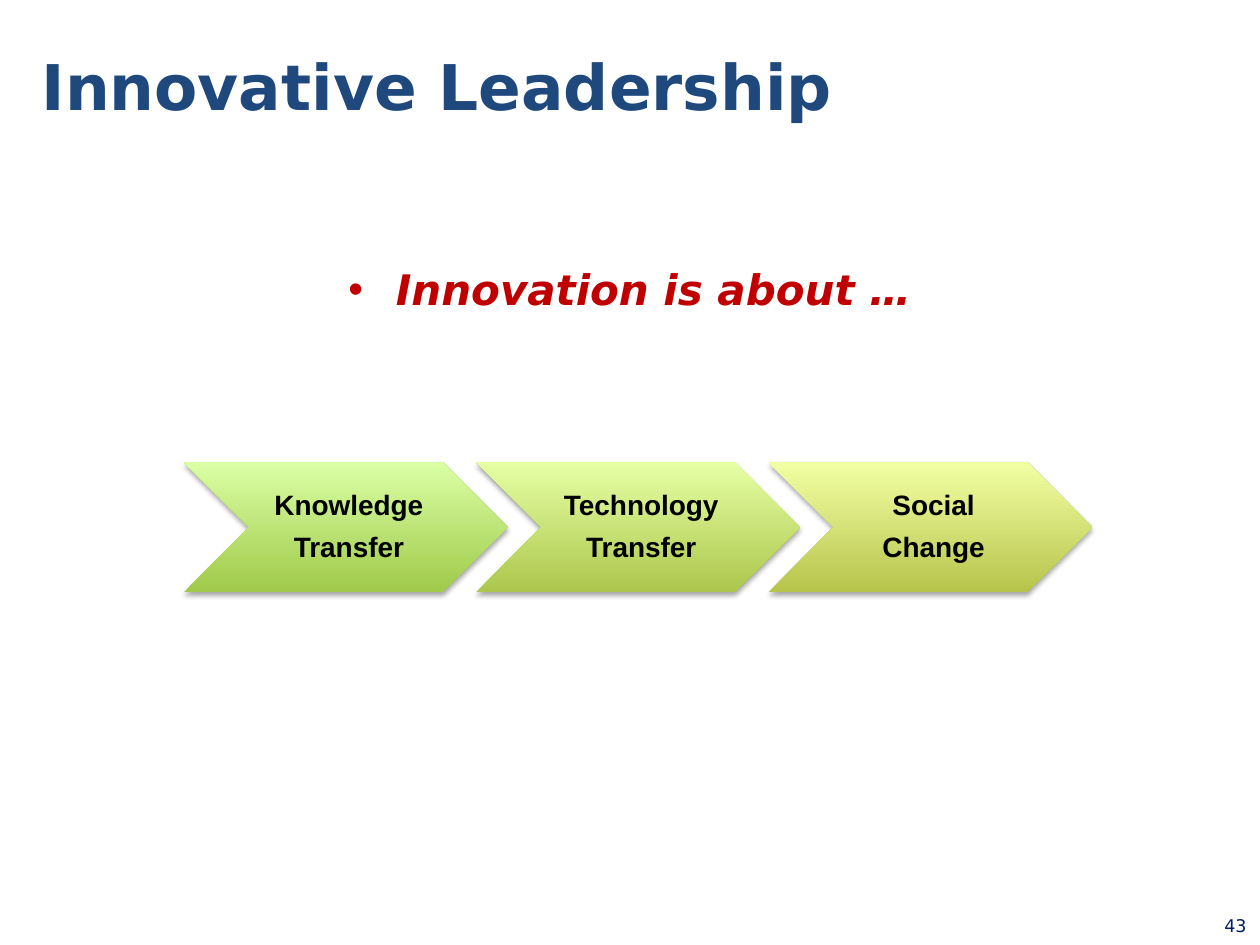
from lxml import etree
from pptx import Presentation
from pptx.dml.color import RGBColor
from pptx.enum.shapes import MSO_SHAPE
from pptx.enum.text import MSO_ANCHOR, MSO_AUTO_SIZE, PP_ALIGN
from pptx.oxml.ns import qn
from pptx.util import Inches, Pt

CHEVRON = MSO_SHAPE.CHEVRON
MIDDLE, TOP = MSO_ANCHOR.MIDDLE, MSO_ANCHOR.TOP
NO_AUTOFIT = MSO_AUTO_SIZE.NONE
LEFT, CENTER = PP_ALIGN.LEFT, PP_ALIGN.CENTER

SANS, LABEL_FONT = "DejaVu Sans", "Arial"
COLORS = {
    "title": "1F497D", "lead": "C00000", "number": "002060",
    "label": "000000", "shadow": "000000",
}

# Row of chevrons: first left edge, top, size and step, in inches
ROW_LEFT, ROW_TOP = 1.46, 3.67
CHEVRON_WIDTH, CHEVRON_HEIGHT, STEP = 2.57, 1.03, 2.32
# Label lines, then the gradient from bottom to top
STAGES = [
    (("Knowledge", "Transfer"), ("A0CA4A", "DAFFA5")),
    (("Technology", "Transfer"), ("ACC74C", "E6FFA5")),
    (("Social", "Change"), ("B7C44C", "F2FFA3")),
]


def place(shape, left, top, width, height):
    shape.left, shape.top = Inches(left), Inches(top)
    shape.width, shape.height = Inches(width), Inches(height)


def set_margins(frame, left, top, right, bottom):
    frame.margin_left, frame.margin_top = Inches(left), Inches(top)
    frame.margin_right, frame.margin_bottom = Inches(right), Inches(bottom)


def write(frame, lines, font, size, color, align=CENTER, anchor=MIDDLE,
          bold=False, italic=False):
    """Fill a text frame with one paragraph per line."""
    frame.text = "\n".join(lines)
    frame.word_wrap = True
    frame.auto_size = NO_AUTOFIT
    frame.vertical_anchor = anchor
    for para in frame.paragraphs:
        para.alignment = align
        para.font.name, para.font.size = font, Pt(size)
        para.font.bold, para.font.italic = bold, italic
        para.font.color.rgb = RGBColor.from_string(COLORS[color])


def remove_bullet(para):
    properties = para._p.get_or_add_pPr()
    properties.set("marL", "0")
    properties.set("indent", "0")
    etree.SubElement(properties, qn("a:buNone"))


def add_soft_shadow(shape):
    shape.shadow.inherit = False
    effects = shape._element.spPr.find(qn("a:effectLst"))
    shadow = etree.SubElement(
        effects, qn("a:outerShdw"), blurRad=str(Pt(3.1)), dist=str(Pt(1.8)),
        dir="5400000", rotWithShape="0")
    color = etree.SubElement(shadow, qn("a:srgbClr"), val=COLORS["shadow"])
    etree.SubElement(color, qn("a:alpha"), val="35000")


def add_title(slide, text):
    title = slide.shapes.title
    place(title, 0.23, 0.13, 6.72, 1.09)
    write(title.text_frame, [text], SANS, 36, "title", align=LEFT, bold=True)


def add_lead(slide, text):
    body = slide.placeholders[1]
    place(body, 0.5, 2.04, 9, 4.99)
    frame = body.text_frame
    remove_bullet(frame.paragraphs[0])
    write(frame, [text], SANS, 24, "lead", anchor=TOP, bold=True, italic=True)
    frame.paragraphs[0].space_before = Pt(0)


def add_stage(slide, column, lines, gradient):
    stage = slide.shapes.add_shape(
        CHEVRON, Inches(ROW_LEFT + column * STEP), Inches(ROW_TOP),
        Inches(CHEVRON_WIDTH), Inches(CHEVRON_HEIGHT))
    stage.fill.gradient()
    stage.fill.gradient_angle = 90
    for stop, color in zip(stage.fill.gradient_stops, gradient):
        stop.color.rgb = RGBColor.from_string(color)
    stage.line.fill.background()
    add_soft_shadow(stage)

    frame = stage.text_frame
    set_margins(frame, 0.07, 0.02, 0.02, 0.02)
    write(frame, lines, LABEL_FONT, 16, "label", bold=True)
    for para in frame.paragraphs:
        para.line_spacing = 0.9
        para.space_after = Pt(6.4)


def add_page_number(slide, number):
    box = slide.shapes.add_textbox(
        Inches(9.65), Inches(7.19), Inches(0.31), Inches(0.31))
    set_margins(box.text_frame, 0, 0, 0, 0)
    write(box.text_frame, [number], SANS, 10, "number")


def main():
    deck = Presentation()
    deck.slide_width, deck.slide_height = Inches(10), Inches(7.5)
    slide = deck.slides.add_slide(deck.slide_layouts[1])

    add_title(slide, "Innovative Leadership")
    add_lead(slide, "Innovation is about …")
    for column, (lines, gradient) in enumerate(STAGES):
        add_stage(slide, column, lines, gradient)
    add_page_number(slide, "43")

    deck.save("out.pptx")


if __name__ == "__main__":
    main()
